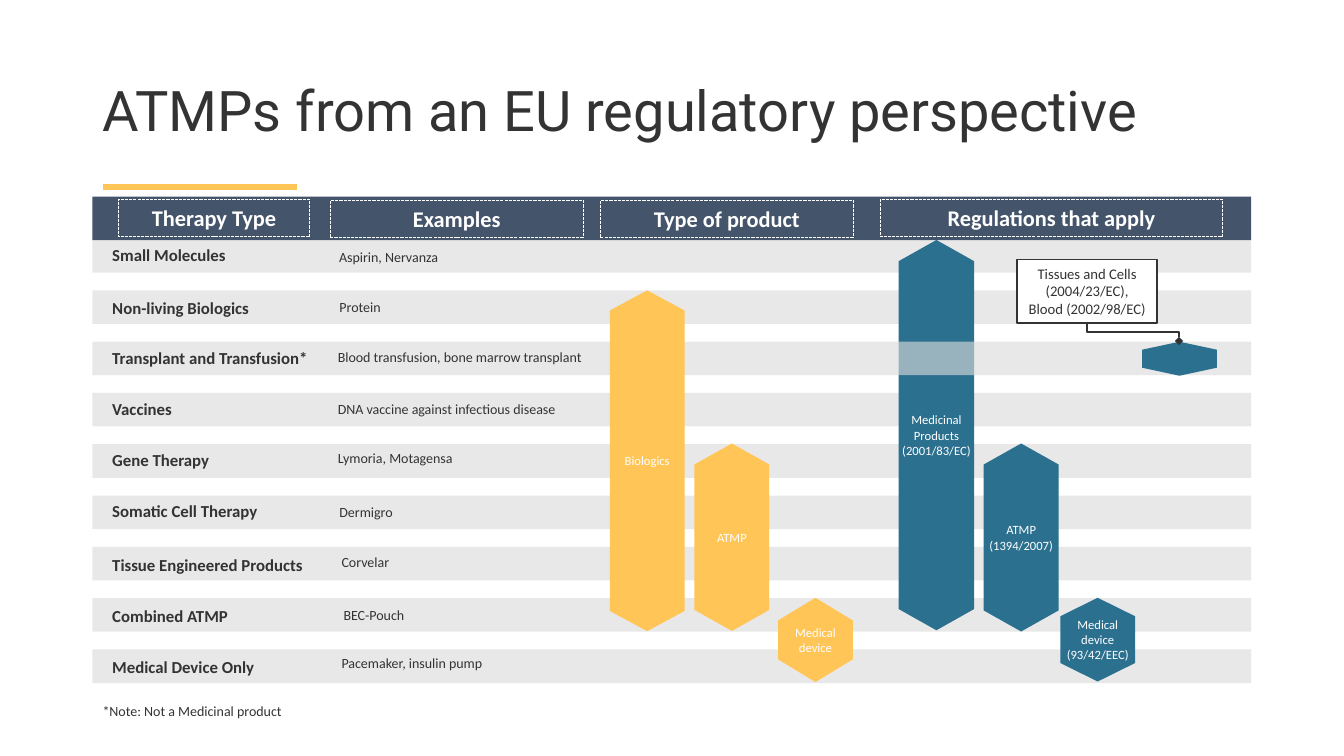
from dataclasses import dataclass
from typing import Any

from lxml import etree
from pptx import Presentation
from pptx import util as u
from pptx.dml.color import RGBColor
from pptx.enum import dml, shapes, text
from pptx.oxml import ns

CHARCOAL = RGBColor(0x33, 0x33, 0x33)
WHITE = RGBColor(0xFF, 0xFF, 0xFF)
YELLOW = RGBColor(0xFF, 0xC5, 0x56)
TEAL = RGBColor(0x2C, 0x70, 0x8F)
NAVY = RGBColor(0x44, 0x54, 0x6A)
GREY = RGBColor(0xDB, 0xDB, 0xDB)

BAND_LEFT, BAND_WIDTH, BAND_HEIGHT = 66, 827.7, 24
FIRST_BAND_TOP, BAND_PITCH = 170.7, 36.65
OVERLAY_ROW = 2


@dataclass(frozen=True)
class Box:
    left: float
    top: float
    width: float
    height: float

    def lengths(self) -> list[int]:
        return [u.Pt(value) for value in (self.left, self.top, self.width, self.height)]


@dataclass(frozen=True)
class Therapy:
    name: str
    name_top: float
    example: str
    example_left: float
    example_top: float


@dataclass(frozen=True)
class Header:
    title: str
    box: Box


@dataclass(frozen=True)
class Span:
    label: str
    box: Box
    color: RGBColor
    point: float
    side_margin: float = 7.2
    end_margin: float = 3.6


THERAPIES = [
    Therapy("Small Molecules", 171, "Aspirin, Nervanza", 235.1, 171.7),
    Therapy("Non-living Biologics", 208.8, "Protein", 235.4, 207.4),
    Therapy("Transplant and Transfusion*", 244.8, "Blood transfusion, bone marrow transplant", 234.2, 243.4),
    Therapy("Vaccines", 281.5, "DNA vaccine against infectious disease", 234.2, 280.1),
    Therapy("Gene Therapy", 317.9, "Lymoria, Motagensa", 234.2, 315.4),
    Therapy("Somatic Cell Therapy", 354.2, "Dermigro", 235.4, 353.5),
    Therapy("Tissue Engineered Products", 392.8, "Corvelar", 236.9, 389.5),
    Therapy("Combined ATMP", 429.1, "BEC-Pouch", 238.3, 427),
    Therapy("Medical Device Only", 465.4, "Pacemaker, insulin pump", 236.9, 461.5),
]

HEADERS = [
    Header("Therapy Type", Box(84.5, 142.6, 136.8, 26.6)),
    Header("Examples", Box(235.9, 143.3, 180.7, 26.6)),
    Header("Type of product", Box(428.8, 143.3, 180.7, 26.6)),
    Header("Regulations that apply", Box(628.7, 142.6, 244.8, 26.6)),
]

MEDICINAL = Span("Medicinal Products\n(2001/83/EC)", Box(642, 171.4, 53.8, 278.8), TEAL, 0.281, 0, 0)
SPANS = [
    Span("Biologics", Box(435.6, 207.4, 53.4, 243.4), YELLOW, 0.27),
    Span("ATMP", Box(496.1, 316.8, 53.4, 133.9), YELLOW, 0.281),
    Span("Medical device", Box(555.8, 427, 53.4, 60.2), YELLOW, 0.304),
    Span("ATMP\n(1394/2007)", Box(702.7, 316.8, 53.4, 134.3), TEAL, 0.281, 2.9, 0),
    Span("Medical device (93/42/EEC)", Box(757.4, 427, 53.4, 59.8), TEAL, 0.247, 2.9, 0),
    Span("", Box(815.8, 244.1, 53.4, 24.3), TEAL, 0.235),
]


def set_format(target: Any, values: dict[str, Any]) -> None:
    for name, value in values.items():
        setattr(target, name, value)


def write(shape: Any, words: str, size: float, color: RGBColor, *, bold: bool = False,
          font: str = "Calibri", align: Any = text.PP_ALIGN.LEFT,
          anchor: Any = text.MSO_ANCHOR.TOP, spacing: float = 1.0,
          side_margin: float = 7.2, end_margin: float = 3.6) -> None:
    frame = shape.text_frame
    set_format(frame, {
        "text": words, "word_wrap": True, "vertical_anchor": anchor,
        "margin_left": u.Pt(side_margin), "margin_right": u.Pt(side_margin),
        "margin_top": u.Pt(end_margin), "margin_bottom": u.Pt(end_margin),
    })
    for paragraph in frame.paragraphs:
        set_format(paragraph, {"alignment": align, "line_spacing": spacing})
        for run in paragraph.runs:
            set_format(run.font, {"name": font, "size": u.Pt(size), "bold": bold})
            run.font.color.rgb = color


def add_text(slide: Any, box: Box, words: str, size: float, **options: Any) -> None:
    write(slide.shapes.add_textbox(*box.lengths()), words, size, CHARCOAL, **options)


def add_block(slide: Any, box: Box, fill: RGBColor | None, line: RGBColor | None = None,
              line_width: float = 1, kind: Any = shapes.MSO_SHAPE.RECTANGLE) -> Any:
    shape = slide.shapes.add_shape(kind, *box.lengths())
    shape.shadow.inherit = False
    if fill is None:
        shape.fill.background()
    else:
        shape.fill.solid()
        shape.fill.fore_color.rgb = fill
    if line is None:
        shape.line.fill.background()
    else:
        shape.line.color.rgb = line
        shape.line.width = u.Pt(line_width)
    return shape


def add_band(slide: Any, row: int) -> None:
    top = FIRST_BAND_TOP + row * BAND_PITCH
    band = add_block(slide, Box(BAND_LEFT, top, BAND_WIDTH, BAND_HEIGHT), GREY)
    color = band._element.spPr.find(".//" + ns.qn("a:srgbClr"))
    etree.SubElement(color, ns.qn("a:alpha"), val="62000")


def add_header(slide: Any, header: Header) -> None:
    shape = add_block(slide, header.box, None, WHITE, 0.75)
    shape.line.dash_style = dml.MSO_LINE.SQUARE_DOT
    shape._element.spPr.find(ns.qn("a:ln")).set("cap", "sq")
    write(shape, header.title, 16, WHITE, bold=True, align=text.PP_ALIGN.CENTER)


def add_span(slide: Any, span: Span) -> None:
    shape = add_block(slide, span.box, span.color, kind=shapes.MSO_SHAPE.UP_DOWN_ARROW)
    guides = shape._element.spPr.find(".//" + ns.qn("a:avLst"))
    for guide in list(guides):
        guides.remove(guide)
    for name, share in (("adj1", 1.0), ("adj2", span.point)):
        etree.SubElement(guides, ns.qn("a:gd"), name=name, fmla=f"val {round(share * 100000)}")
    if span.label:
        write(shape, span.label, 9, WHITE, align=text.PP_ALIGN.CENTER,
              anchor=text.MSO_ANCHOR.MIDDLE, side_margin=span.side_margin,
              end_margin=span.end_margin)


def add_line(slide: Any, kind: Any, ends: tuple[float, float, float, float],
             color: RGBColor, width: float) -> Any:
    connector = slide.shapes.add_connector(kind, *[u.Pt(value) for value in ends])
    connector.line.color.rgb = color
    connector.line.width = u.Pt(width)
    etree.SubElement(connector._element.spPr, ns.qn("a:effectLst"))
    return connector


def add_tissue_callout(slide: Any) -> None:
    callout = add_block(slide, Box(726.5, 185.3, 100.1, 45.4), WHITE, CHARCOAL, 1)
    write(callout, "Tissues and Cells (2004/23/EC), Blood (2002/98/EC)", 10.5, CHARCOAL,
          align=text.PP_ALIGN.CENTER)
    connector = add_line(slide, shapes.MSO_CONNECTOR.ELBOW, (816, 204.2, 802.8, 269.8), CHARCOAL, 1.5)
    connector._element.spPr.find(ns.qn("a:xfrm")).set("rot", "16200000")
    line = connector._element.spPr.find(ns.qn("a:ln"))
    etree.SubElement(line, ns.qn("a:tailEnd"), type="diamond")


def main() -> None:
    presentation = Presentation()
    set_format(presentation, {"slide_width": u.Pt(960), "slide_height": u.Pt(540)})
    slide = presentation.slides.add_slide(presentation.slide_layouts[6])

    add_line(slide, shapes.MSO_CONNECTOR.STRAIGHT, (212.3, 133.5, 73.8, 133.5), YELLOW, 4)
    add_text(slide, Box(66.2, 28.8, 828, 104.4),
             "ATMPs from an EU regulatory perspective", 40, font="Roboto",
             anchor=text.MSO_ANCHOR.MIDDLE, spacing=0.9)

    for row in range(len(THERAPIES)):
        if row != OVERLAY_ROW:
            add_band(slide, row)
    add_block(slide, Box(BAND_LEFT, 140.5, BAND_WIDTH, 31), NAVY)
    for header in HEADERS:
        add_header(slide, header)

    add_span(slide, MEDICINAL)
    add_band(slide, OVERLAY_ROW)
    for span in SPANS:
        add_span(slide, span)

    for therapy in THERAPIES:
        add_text(slide, Box(73.1, therapy.name_top, 180, 21.8), therapy.name, 12, bold=True)
        add_text(slide, Box(therapy.example_left, therapy.example_top, 189.4, 23.8),
                 therapy.example, 10, anchor=text.MSO_ANCHOR.MIDDLE)

    add_tissue_callout(slide)
    add_text(slide, Box(66.2, 498.2, 236.2, 19.4), "*Note: Not a Medicinal product", 10)
    presentation.save("out.pptx")


if __name__ == "__main__":
    main()
